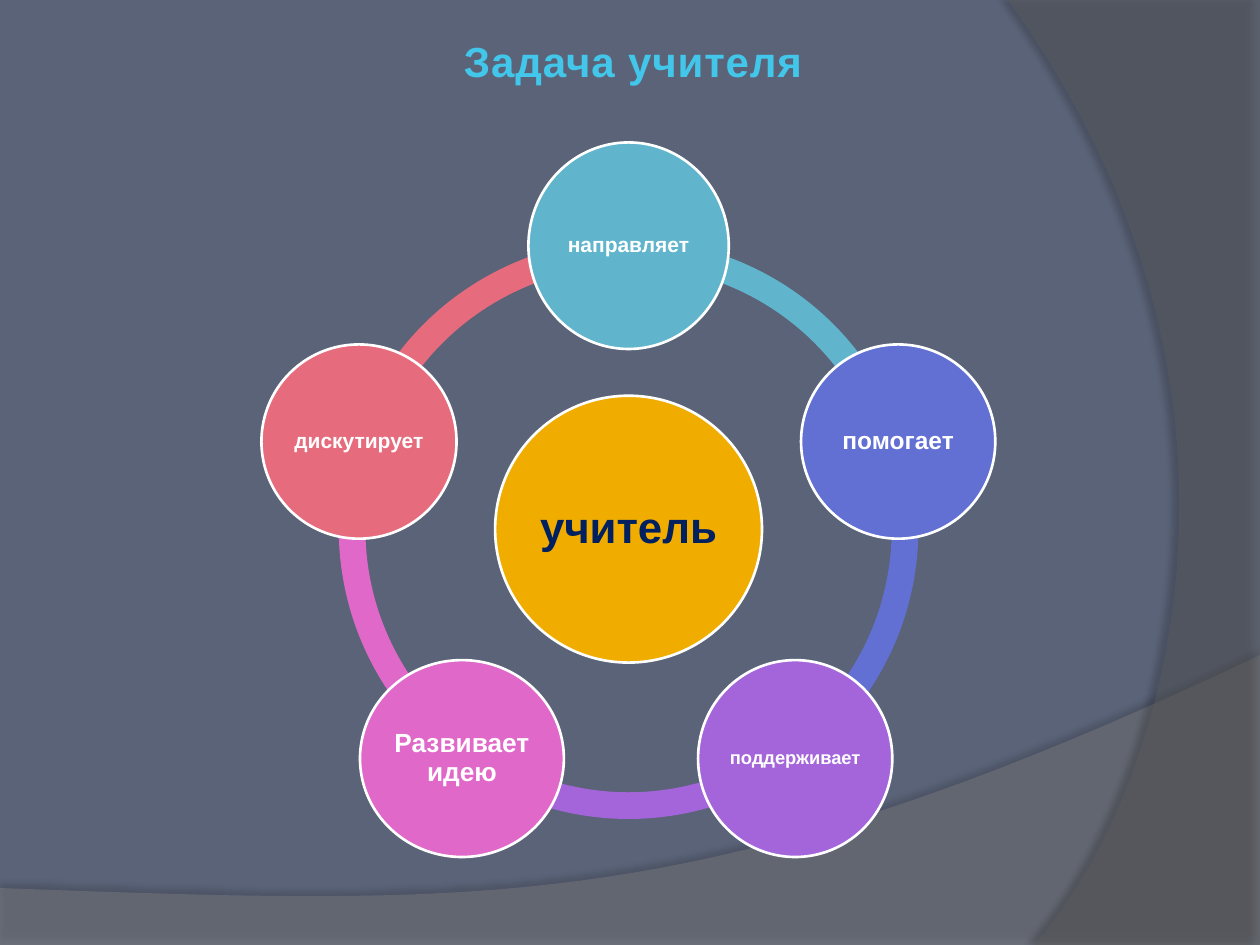
import math
from lxml import etree
from pptx import Presentation
from pptx.dml.color import RGBColor
from pptx.enum import shapes as kinds, text as txt
from pptx.oxml.ns import qn
from pptx.util import Pt

NODES = [  # word, colour, text size, width, height; clockwise from the top
    ("направляет", "60B5CC", 12, 114.5, 118),
    ("помогает", "6270D3", 14, 111, 111),
    ("поддерживает", "A465DA", 10.5, 111, 112.5),
    ("Развивает идею", "E068C8", 15, 116.5, 112.5),
    ("дискутирует", "E66C7D", 12, 111.5, 111),
]


def rgb(code):
    return RGBColor.from_string(code)


def paint(shape, code):
    shape.shadow.inherit = False
    shape.fill.solid()
    shape.fill.fore_color.rgb = rgb(code)
    shape.line.fill.background()


def style(para, size, code):
    para.alignment = txt.PP_ALIGN.CENTER
    for run in para.runs:
        font = run.font
        font.name, font.size, font.bold = "Arial", Pt(size), True
        font.color.rgb = rgb(code)


def alpha(color, share):
    etree.SubElement(color, qn("a:alpha"), val=str(share * 1000))


def curve(start, one, two, end, steps=40):
    """Points of a cubic Bezier curve."""
    for i in range(steps + 1):
        t = i / steps
        s = 1 - t
        yield tuple(s**3 * a + 3 * s * s * t * b + 3 * s * t * t * c + t**3 * d
                    for a, b, c, d in zip(start, one, two, end))


def wave(slide, points, code, share, dark, dist, turn):
    """Translucent swoosh with a soft shadow cast in direction turn."""
    first, *rest = [(Pt(x), Pt(y)) for x, y in points]
    form = slide.shapes.build_freeform(*first)
    form.add_line_segments(rest)
    shape = form.convert_to_shape()
    paint(shape, code)
    props = shape._element.spPr
    alpha(props.find(".//" + qn("a:srgbClr")), share)
    glow = etree.SubElement(props.find(qn("a:effectLst")), qn("a:outerShdw"),
                            blurRad=str(Pt(4)), dist=str(Pt(dist)),
                            dir=str(turn * 60000), algn="ctr", rotWithShape="0")
    alpha(etree.SubElement(glow, qn("a:srgbClr"), val="000000"), dark)


def backdrop(slide, wide, high):
    fill = slide.background.fill
    fill.solid()
    fill.fore_color.rgb = rgb("5A6378")
    low = curve((wide, 374.4), (402.5, 525), (281.5, 517.5), (0, 507.5))
    wave(slide, [(0, high), (wide, high), *low], "7F7F7F", 45, 35, 3.5, 270)
    side = curve((591, high), (673, 445.5), (733, 216), (576, 0))
    wave(slide, [(wide, 0), (wide, high), *side], "5E5E5E", 40, 45, 4, 180)


def heading(slide, left, top, wide, high):
    title = slide.shapes.title
    title.left, title.top, title.width, title.height = map(Pt, (left, top, wide, high))
    frame = title.text_frame
    frame.text = "Задача учителя "
    frame.vertical_anchor = txt.MSO_ANCHOR.MIDDLE
    para = frame.paragraphs[0]
    style(para, 24, "42C6EA")
    para.runs[0]._r.get_or_add_rPr().set("spc", "50")


def disc(slide, x, y, wide, high, word, code, size, ink="FFFFFF"):
    """Labelled circle centred on x, y."""
    shape = slide.shapes.add_shape(kinds.MSO_SHAPE.OVAL, Pt(x - wide / 2),
                                   Pt(y - high / 2), Pt(wide), Pt(high))
    paint(shape, code)
    shape.line.color.rgb = rgb("FFFFFF")
    shape.line.width = Pt(1.5)
    frame = shape.text_frame
    frame.text = word
    frame.word_wrap = True
    frame.vertical_anchor = txt.MSO_ANCHOR.MIDDLE
    frame.margin_left = frame.margin_right = Pt(1.4)
    frame.margin_top = frame.margin_bottom = Pt(1.4)
    para = frame.paragraphs[0]
    para.line_spacing = 0.9
    style(para, size, ink)


def wheel(slide, left, top, side):
    """Ring of arcs with a hub and one disc at each joint."""
    step = 360 / len(NODES)
    turns = [(270 + i * step) % 360 for i in range(len(NODES))]
    for turn, node in reversed(list(zip(turns, NODES))):
        arc = slide.shapes.add_shape(kinds.MSO_SHAPE.BLOCK_ARC, Pt(left), Pt(top),
                                     Pt(side), Pt(side))
        paint(arc, node[1])
        # angles are kept in 1/60000 degree, adjustments in 1/100000
        for i, value in enumerate((turn * 0.6, (turn + step) % 360 * 0.6, 0.046)):
            arc.adjustments[i] = value
    x, y = left + side / 2, top + side / 2
    disc(slide, x, y, 152.5, 152.5, "учитель", "F0AD00", 25, "002060")
    reach = 162
    for turn, (word, code, size, wide, high) in zip(turns, NODES):
        angle = math.radians(turn)
        disc(slide, x + reach * math.cos(angle), y + reach * math.sin(angle),
             wide, high, word, code, size)


def main():
    deck = Presentation()
    deck.slide_width, deck.slide_height = Pt(720), Pt(540)
    slide = deck.slides.add_slide(deck.slide_layouts[5])
    backdrop(slide, 720, 540)
    heading(slide, 50.4, 16.5, 630, 36)
    wheel(slide, 193.6, 136.8, 331.2)
    deck.save("out.pptx")


if __name__ == "__main__":
    main()
